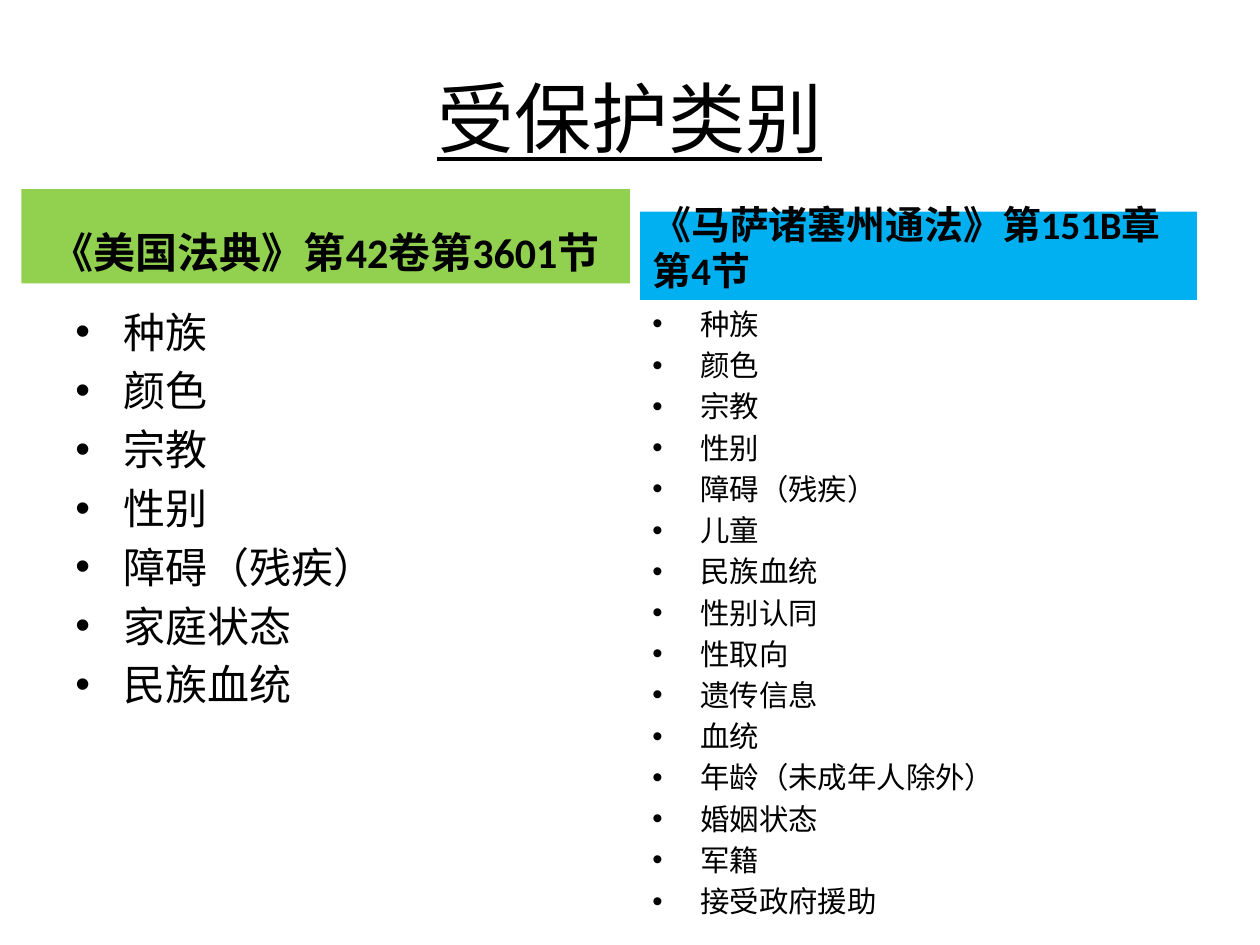
import pptx
import pptx.dml.color
import pptx.enum.shapes
import pptx.enum.text
import pptx.util
from pptx.oxml.ns import qn
from lxml import etree

BLACK = pptx.dml.color.RGBColor(0x00, 0x00, 0x00)
GREEN = pptx.dml.color.RGBColor(0x92, 0xD0, 0x50)
BLUE = pptx.dml.color.RGBColor(0x00, 0xB0, 0xF0)
LEFT = pptx.enum.text.PP_ALIGN.LEFT
CENTER = pptx.enum.text.PP_ALIGN.CENTER
TOP = pptx.enum.text.MSO_ANCHOR.TOP
MIDDLE = pptx.enum.text.MSO_ANCHOR.MIDDLE
BOTTOM = pptx.enum.text.MSO_ANCHOR.BOTTOM

deck = pptx.Presentation()
deck.slide_width = pptx.util.Inches(10)
deck.slide_height = pptx.util.Inches(7.5)
slide = deck.slides.add_slide(deck.slide_layouts[6])


def add_block(box, fill=None):
    """Add a rectangle or, without a fill, a text box; box is in inches."""
    place = [pptx.util.Inches(length) for length in box]
    if fill is None:
        return slide.shapes.add_textbox(*place)
    block = slide.shapes.add_shape(pptx.enum.shapes.MSO_SHAPE.RECTANGLE, *place)
    block.shadow.inherit = False
    block.fill.solid()
    block.fill.fore_color.rgb = fill
    block.line.fill.background()
    return block


def write(block, lines, size, anchor, align=LEFT, bold=False, underline=False,
          spaced=True, bullet=False):
    """Fill a block with one paragraph per line."""
    frame = block.text_frame
    frame.word_wrap = True
    frame.vertical_anchor = anchor
    for number, line in enumerate(lines):
        paragraph = frame.add_paragraph() if number else frame.paragraphs[0]
        paragraph.alignment = align
        run = paragraph.add_run()
        run.text = line
        run.font.name = "Calibri"
        run.font.size = pptx.util.Pt(size)
        run.font.bold = bold
        run.font.underline = underline
        run.font.color.rgb = BLACK
        properties = paragraph._p.get_or_add_pPr()
        if spaced:
            before = etree.SubElement(properties, qn("a:spcBef"))
            etree.SubElement(before, qn("a:spcPct")).set("val", "20000")
        if bullet:
            indent = pptx.util.Inches(0.38)
            properties.set("marL", str(indent))
            properties.set("indent", str(-indent))
            etree.SubElement(properties, qn("a:buFont")).set("typeface", "Arial")
            etree.SubElement(properties, qn("a:buChar")).set("char", "•")


# Title
write(add_block((0.5, 0.3, 9, 1.25)), ["受保护类别"], 44, MIDDLE, CENTER,
      underline=True, spaced=False)

# Two columns: a coloured heading above a bulleted list
shared = ["种族", "颜色", "宗教", "性别", "障碍（残疾）"]
federal = shared + ["家庭状态", "民族血统"]
state = shared + ["儿童", "民族血统", "性别认同", "性取向", "遗传信息", "血统",
                  "年龄（未成年人除外）", "婚姻状态", "军籍", "接受政府援助"]
list_top, list_width, list_height = 2.38, 4.42, 4.32

columns = [
    ("《美国法典》第42卷第3601节", (0.17, 1.5, 4.83, 0.75), GREEN, 24, CENTER,
     federal, 0.5, 24),
    ("《马萨诸塞州通法》第151B章第4节", (5.08, 1.68, list_width, 0.7), BLUE, 22.2, LEFT,
     state, 5.08, 16.8),
]
for heading, box, color, heading_size, align, categories, left, size in columns:
    write(add_block(box, color), [heading], heading_size, BOTTOM, align, bold=True)
    write(add_block((left, list_top, list_width, list_height)), categories, size, TOP,
          bullet=True)

deck.save("out.pptx")
